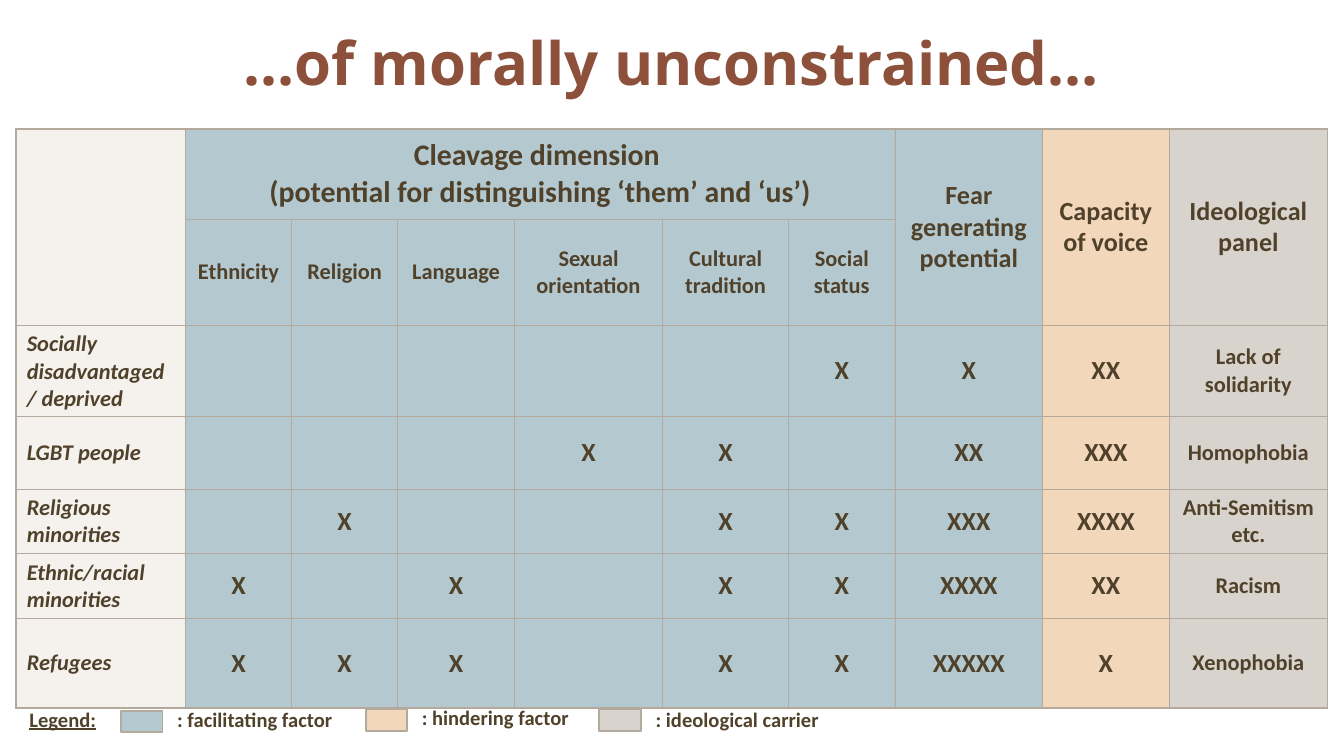
"""Build a slide with a table of minority groups and the factors behind hostility."""
from lxml import etree
from pptx import Presentation
from pptx.dml.color import RGBColor
from pptx.enum.shapes import MSO_SHAPE
from pptx.enum.text import MSO_ANCHOR, PP_ALIGN
from pptx.oxml.ns import qn
from pptx.util import Inches, Pt

LEFT, CENTER = PP_ALIGN.LEFT, PP_ALIGN.CENTER
TOP, MIDDLE = MSO_ANCHOR.TOP, MSO_ANCHOR.MIDDLE
RECT = MSO_SHAPE.RECTANGLE
BROWN, RUST, EDGE = "50412B", "8D503B", "B3A99D"
CREAM, BLUE, PEACH, GREY = "EFEAE4", "6B95A1", "E9B178", "B3AA9D"


def paint(fill, color, alpha=100):
    fill.solid()
    fill.fore_color.rgb = RGBColor.from_string(color)
    if alpha < 100:
        tag = fill._xPr.find(".//" + qn("a:srgbClr"))
        etree.SubElement(tag, qn("a:alpha"), val=str(alpha * 1000))


def write(frame, text, size=11, color=BROWN, font="Calibri", align=LEFT,
          anchor=TOP, italic=False, underline=False):
    frame.word_wrap = True
    frame.vertical_anchor = anchor
    for num, line in enumerate(text.split("\n")):
        para = frame.paragraphs[0] if num == 0 else frame.add_paragraph()
        para.alignment = align
        run = para.add_run()
        run.text = line
        run.font.name, run.font.size = font, Pt(size)
        run.font.bold, run.font.italic = True, italic
        run.font.underline = underline
        paint(run.font.fill, color)


deck = Presentation()
deck.slide_width, deck.slide_height = Inches(10), Inches(10) * 9 // 16
slide = deck.slides.add_slide(deck.slide_layouts[6])

title = slide.shapes.add_textbox(Inches(0.12), Inches(0.14), Inches(9.76), Inches(0.87))
write(title.text_frame, "…of morally unconstrained…", size=32, color=RUST,
      font="Open Sans", align=CENTER)

widths = [1.26, 0.79, 0.79, 0.87, 1.1, 0.94, 0.79, 1.1, 0.94, 1.18]
heights = [0.67, 0.79, 0.68, 0.54, 0.48, 0.48, 0.67]
fills = [CREAM] + [BLUE] * 7 + [PEACH, GREY]
rows = [
    ["", "Cleavage dimension \n(potential for distinguishing ‘them’ and ‘us’)", "", "", "", "", "",
     "Fear generating potential", "Capacity of voice", "Ideological panel"],
    ["", "Ethnicity", "Religion", "Language", "Sexual orientation",
     "Cultural tradition", "Social status", "", "", ""],
    ["Socially disadvantaged / deprived", "", "", "", "", "", "X", "X", "XX", "Lack of solidarity"],
    ["LGBT people", "", "", "", "X", "X", "", "XX", "XXX", "Homophobia"],
    ["Religious minorities", "", "X", "", "", "X", "X", "XXX", "XXXX", "Anti-Semitism etc."],
    ["Ethnic/racial minorities", "X", "", "X", "", "X", "X", "XXXX", "XX", "Racism"],
    ["Refugees", "X", "X", "X", "", "X", "X", "XXXXX", "X", "Xenophobia"],
]
last_row, last_col = len(rows) - 1, len(widths) - 1

grid = slide.shapes.add_table(len(rows), len(widths), Inches(0.12), Inches(0.96),
                              Inches(sum(widths)), Inches(sum(heights))).table
grid.first_row = grid.horz_banding = False
for col, width in zip(grid.columns, widths):
    col.width = Inches(width)
for row, height in zip(grid.rows, heights):
    row.height = Inches(height)

for r, texts in enumerate(rows):
    for c, text in enumerate(texts):
        cell = grid.cell(r, c)
        side = 0.08 if c == 0 else 0.04
        cell.margin_left = cell.margin_right = Inches(side)
        cell.margin_top = cell.margin_bottom = Inches(0.04)
        cell.vertical_anchor = MIDDLE
        paint(cell.fill, fills[c], 60 if c == 0 else 50)
        props = cell._tc.get_or_add_tcPr()
        outer = {"L": c == 0, "R": c == last_col, "T": r == 0, "B": r == last_row}
        for num, (edge, thick) in enumerate(outer.items()):
            line = etree.Element(qn("a:ln" + edge), w=str(Pt(1 if thick else 0.5)))
            solid = etree.SubElement(line, qn("a:solidFill"))
            etree.SubElement(solid, qn("a:srgbClr"), val=EDGE)
            props.insert(num, line)
        if text:
            if r == 0:
                size = 16 if c == 1 else 14
            else:
                size = 14 if set(text) == {"X"} else 12
            write(cell.text_frame, text, size=size, align=CENTER if c else LEFT,
                  anchor=MIDDLE, italic=c == 0)

grid.cell(0, 1).merge(grid.cell(0, 6))
for c in (0, 7, 8, 9):
    grid.cell(0, c).merge(grid.cell(1, c))

label = slide.shapes.add_textbox(Inches(0.12), Inches(5.21), Inches(0.71), Inches(0.29))
write(label.text_frame, "Legend:", underline=True)
legend = [
    (0.9, 5.29, BLUE, 5.21, 1.5, ": facilitating factor"),
    (2.72, 5.28, PEACH, 5.2, 1.33, ": hindering factor"),
    (4.46, 5.28, GREY, 5.21, 1.48, ": ideological carrier"),
]
for left, top, color, text_top, width, text in legend:
    swatch = slide.shapes.add_shape(RECT, Inches(left), Inches(top), Inches(0.31), Inches(0.16))
    swatch.shadow.inherit = False
    paint(swatch.fill, color, 50)
    paint(swatch.line.fill, GREY)
    swatch.line.width = Pt(1)
    label = slide.shapes.add_textbox(Inches(left + 0.32), Inches(text_top),
                                     Inches(width), Inches(0.29))
    write(label.text_frame, text)

deck.save("out.pptx")
